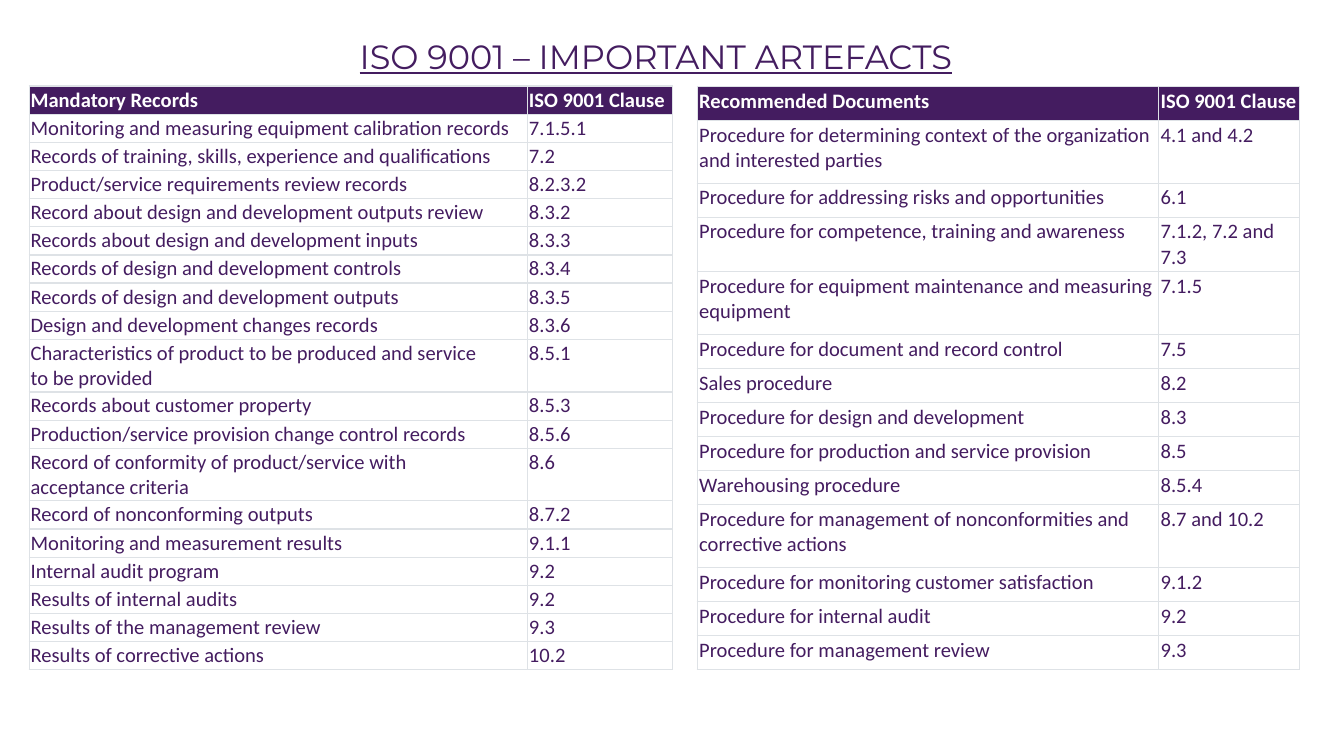
from dataclasses import dataclass

from lxml.etree import SubElement
from pptx import Presentation
from pptx.dml.color import RGBColor
from pptx.enum.text import MSO_AUTO_SIZE, PP_ALIGN
from pptx.oxml.ns import qn
from pptx.util import Pt


@dataclass(frozen=True)
class Theme:
    title: str = "441D60"
    ink: str = "441C60"
    paper: str = "FFFFFF"
    rule: str = "DEE2E6"
    head_font: str = "Montserrat"
    body_font: str = "Calibri"
    head_size: float = 18
    body_size: float = 11
    rule_width: float = 0.75


CLAUSE = "ISO 9001 Clause"

RECORDS = [
    ("Mandatory Records", CLAUSE),
    ("Monitoring and measuring equipment calibration records", "7.1.5.1"),
    ("Records of training, skills, experience and qualifications", "7.2"),
    ("Product/service requirements review records", "8.2.3.2"),
    ("Record about design and development outputs review", "8.3.2"),
    ("Records about design and development inputs", "8.3.3"),
    ("Records of design and development controls", "8.3.4"),
    ("Records of design and development outputs", "8.3.5"),
    ("Design and development changes records", "8.3.6"),
    ("Characteristics of product to be produced and service\nto be provided", "8.5.1"),
    ("Records about customer property", "8.5.3"),
    ("Production/service provision change control records", "8.5.6"),
    ("Record of conformity of product/service with\nacceptance criteria", "8.6"),
    ("Record of nonconforming outputs", "8.7.2"),
    ("Monitoring and measurement results", "9.1.1"),
    ("Internal audit program", "9.2"),
    ("Results of internal audits", "9.2"),
    ("Results of the management review", "9.3"),
    ("Results of corrective actions", "10.2"),
]

PAPERS = [
    ("Recommended Documents", CLAUSE),
    ("Procedure for determining context of the organization and interested parties",
     "4.1 and 4.2"),
    ("Procedure for addressing risks and opportunities", "6.1"),
    ("Procedure for competence, training and awareness", "7.1.2, 7.2 and 7.3"),
    ("Procedure for equipment maintenance and measuring equipment", "7.1.5"),
    ("Procedure for document and record control", "7.5"),
    ("Sales procedure", "8.2"),
    ("Procedure for design and development", "8.3"),
    ("Procedure for production and service provision", "8.5"),
    ("Warehousing procedure", "8.5.4"),
    ("Procedure for management of nonconformities and corrective actions",
     "8.7 and 10.2"),
    ("Procedure for monitoring customer satisfaction", "9.1.2"),
    ("Procedure for internal audit", "9.2"),
    ("Procedure for management review", "9.3"),
]


class Deck:
    def __init__(self, theme):
        self.theme = theme
        self.file = Presentation()
        self.file.slide_width, self.file.slide_height = Pt(720), Pt(405)
        self.slide = self.file.slides.add_slide(self.file.slide_layouts[6])

    def style(self, frame, name, size, color, bold=False):
        for para in frame.paragraphs:
            para.font.name = name
            para.font.size = Pt(size)
            para.font.bold = bold
            para.font.color.rgb = RGBColor.from_string(color)

    def title(self, text, left, top, width, height):
        box = self.slide.shapes.add_textbox(Pt(left), Pt(top), Pt(width), Pt(height))
        frame = box.text_frame
        frame.word_wrap = True
        frame.auto_size = MSO_AUTO_SIZE.SHAPE_TO_FIT_TEXT
        frame.text = text
        self.style(frame, self.theme.head_font, self.theme.head_size, self.theme.title)
        frame.paragraphs[0].alignment = PP_ALIGN.CENTER
        frame.paragraphs[0].font.underline = True

    def border(self, cell):
        props = cell._tc.get_or_add_tcPr()
        for side in ("a:lnL", "a:lnR", "a:lnT", "a:lnB"):
            line = SubElement(props, qn(side), w=str(Pt(self.theme.rule_width)))
            fill = SubElement(line, qn("a:solidFill"))
            SubElement(fill, qn("a:srgbClr"), val=self.theme.rule)

    def cell(self, cell, text, inset, head):
        look = self.theme
        ink, back = (look.paper, look.ink) if head else (look.ink, look.paper)
        cell.margin_left = cell.margin_right = Pt(inset)
        cell.margin_top = cell.margin_bottom = Pt(inset)
        cell.text = text
        self.style(cell.text_frame, look.body_font, look.body_size, ink, head)
        self.border(cell)
        cell.fill.solid()
        cell.fill.fore_color.rgb = RGBColor.from_string(back)

    def table(self, rows, left, top, widths, height, inset, special):
        """Draw rows of one height; special maps a row index to another height."""
        heights = [special.get(i, height) for i in range(len(rows))]
        frame = self.slide.shapes.add_table(
            len(rows), len(widths), Pt(left), Pt(top), Pt(sum(widths)), Pt(sum(heights)))
        table = frame.table
        table.horz_banding = False
        for column, width in zip(table.columns, widths):
            column.width = Pt(width)
        for r, texts in enumerate(rows):
            table.rows[r].height = Pt(heights[r])
            for c, text in enumerate(texts):
                self.cell(table.cell(r, c), text, inset, r == 0)


def main():
    deck = Deck(Theme())
    deck.title("ISO 9001 – IMPORTANT ARTEFACTS", 20.2, 15.8, 662.4, 28.8)
    deck.table(RECORDS, 15.7, 46.1, (267, 77.4), 15.1, 0.7, {9: 28.2, 12: 28.2})
    deck.table(PAPERS, 373.5, 46.3, (247.2, 75.6), 18.2, 1.1,
               {1: 33.7, 3: 29.3, 4: 33.7, 10: 33.7})
    deck.file.save("out.pptx")


if __name__ == "__main__":
    main()
